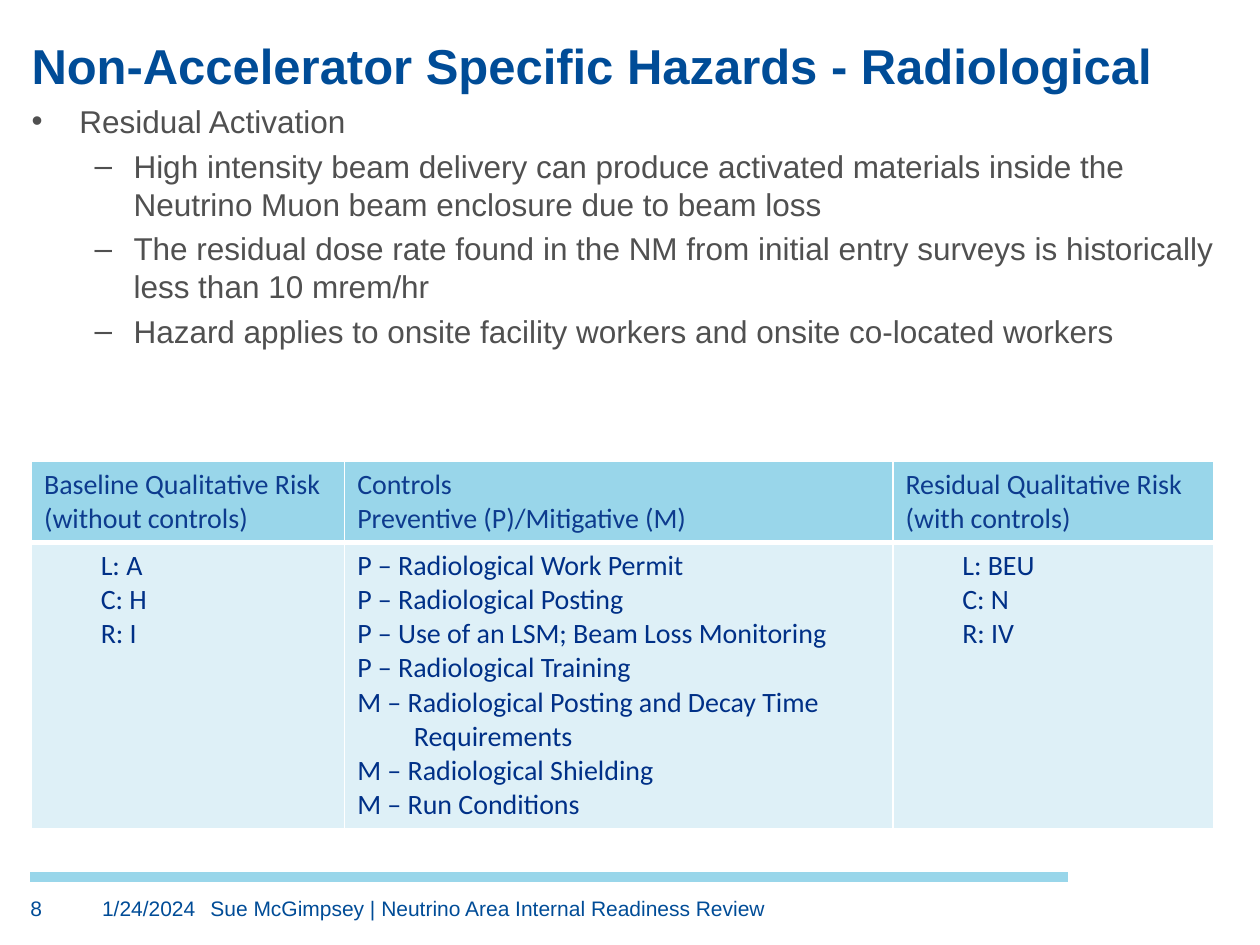
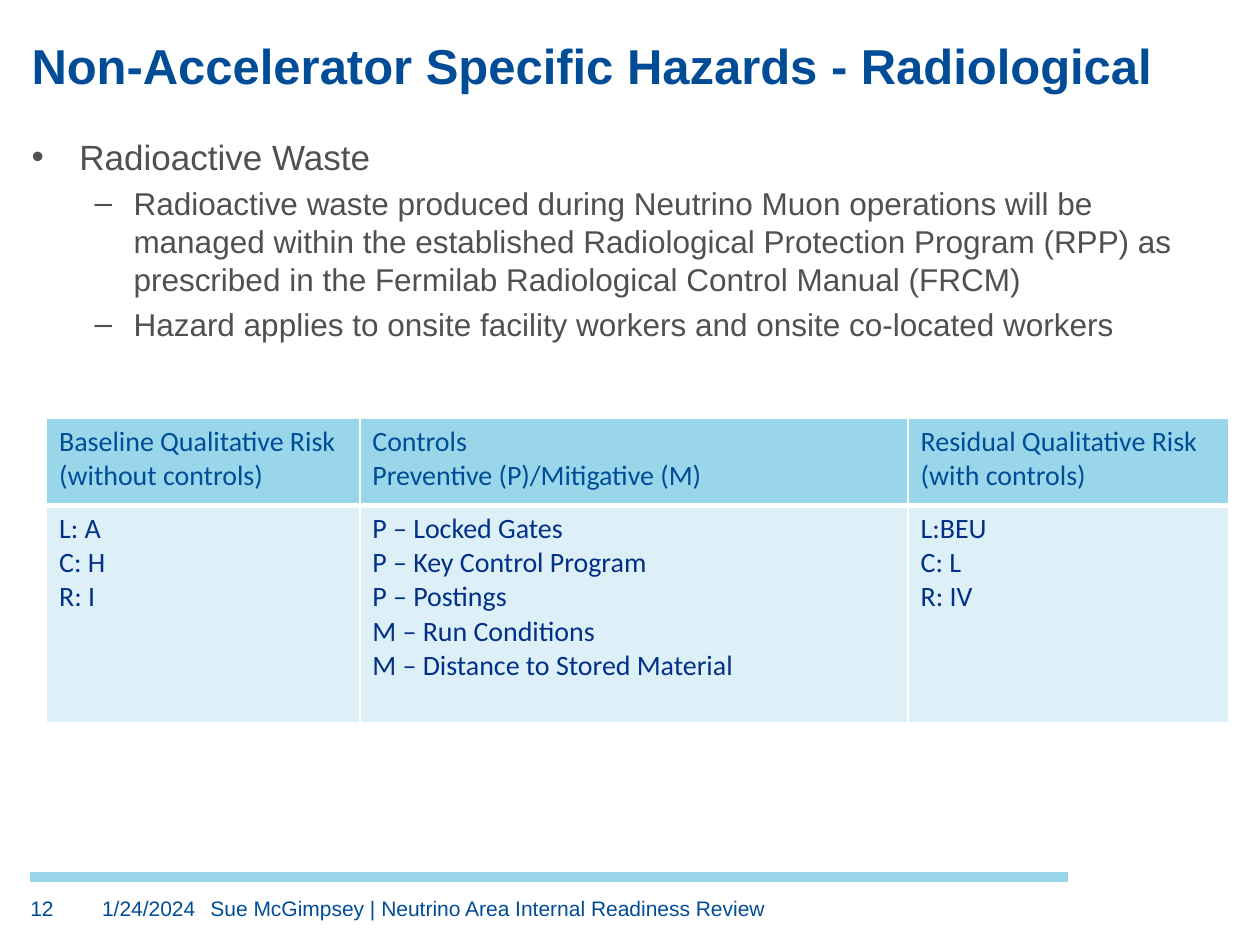
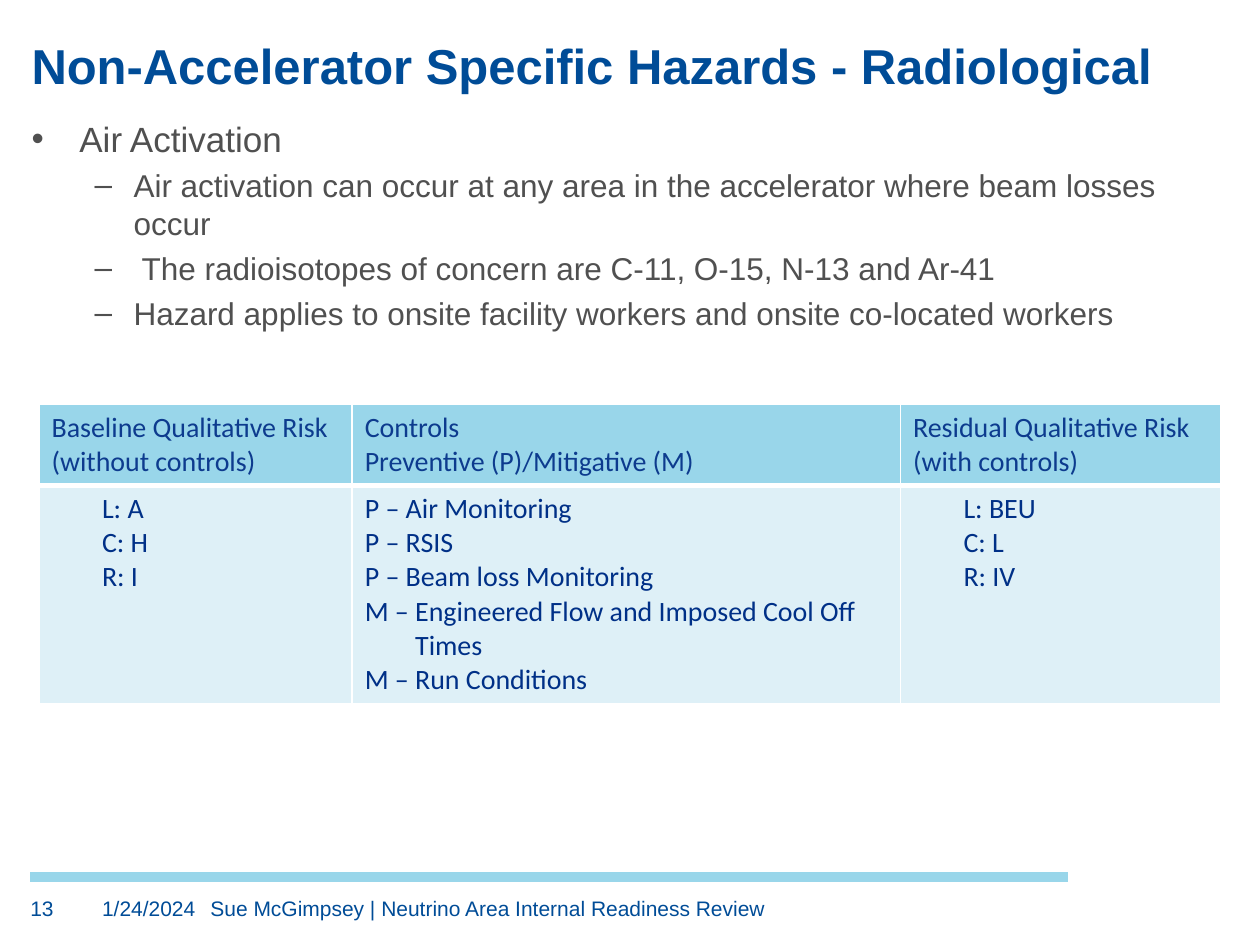
from dataclasses import dataclass

from lxml import etree
from pptx import Presentation
from pptx.dml.color import RGBColor
from pptx.enum.shapes import MSO_CONNECTOR as CONN
from pptx.enum.text import MSO_ANCHOR as ANCHOR, MSO_AUTO_SIZE as AUTO, PP_ALIGN as ALIGN
from pptx.oxml.ns import qn
from pptx.util import Inches, Pt

# Shared look
BLUE, NAVY, HEAD_INK = "004C97", "003087", "0D3B8E"
GREY, SKY, PALE, WHITE = "505050", "99D6EA", "DEF0F7", "FFFFFF"
SANS, TABLE_FONT = "Arial", "Calibri"

# Grid: 100 columns by 100 rows over the slide
SLIDE_W, SLIDE_H = Inches(10), Inches(7.5)
COL, ROW = SLIDE_W / 100, SLIDE_H / 100

TITLE = "Non-Accelerator Specific Hazards - Radiological"
DATE = "1/24/2024"
FOOTER = "Sue McGimpsey | Neutrino Area Internal Readiness Review"
WORKERS = "Hazard applies to onsite facility workers and onsite co-located workers"
HEADERS = [
    ["Baseline Qualitative Risk (without controls)"],
    ["Controls", "Preventive (P)/Mitigative (M)"],
    ["Residual Qualitative Risk", "(with controls)"],
]
COL_SHARES = (0.265, 0.464, 0.271)


@dataclass
class Box:
    col: float
    row: float
    cols: float
    rows: float

    def emu(self):
        return (round(self.col * COL), round(self.row * ROW),
                round(self.cols * COL), round(self.rows * ROW))


TITLE_BOX = Box(2.5, 3.73, 95, 6.27)
FOOT_BOX = Box(2.4, 92.8, 82.4, 5.6)


@dataclass
class Hazard:
    number: str
    topic: str
    topic_size: int
    points: list
    body: Box
    table: Box
    head_rows: float
    baseline: list
    controls: list
    residual: list
    head_ink: str = HEAD_INK
    hang: float = 0  # indent of wrapped control lines, in columns


def rgb(color):
    return RGBColor.from_string(color)


def add_run(p, text, size, color, font=SANS, bold=False):
    r = p.add_run()
    r.text = text
    r.font.size, r.font.name, r.font.bold = Pt(size), font, bold
    r.font.color.rgb = rgb(color)


def place(sp, box):
    sp.left, sp.top, sp.width, sp.height = box.emu()


def bare_frame(sp, anchor=ANCHOR.TOP):
    tf = sp.text_frame
    tf.word_wrap, tf.auto_size, tf.vertical_anchor = True, AUTO.NONE, anchor
    tf.margin_left = tf.margin_right = tf.margin_top = tf.margin_bottom = 0
    return tf


def set_indent(p, left, first=0, bullet=None):
    pPr = p._p.get_or_add_pPr()
    pPr.set("marL", str(round(left * COL)))
    pPr.set("indent", str(round(first * COL)))
    if bullet:
        etree.SubElement(pPr, qn("a:buFont")).set("typeface", SANS)
        etree.SubElement(pPr, qn("a:buChar")).set("char", bullet)


def add_title(slide, box):
    place(slide.shapes.title, box)
    p = bare_frame(slide.shapes.title, ANCHOR.BOTTOM).paragraphs[0]
    p.alignment = ALIGN.LEFT
    add_run(p, TITLE, 28, BLUE, bold=True)


def add_body(slide, hazard):
    sp = slide.placeholders[1]
    place(sp, hazard.body)
    tf = bare_frame(sp)
    p = tf.paragraphs[0]
    set_indent(p, 3.8, -3.8, "•")
    p.space_before = Pt(0)
    add_run(p, hazard.topic, hazard.topic_size, GREY)
    for point in hazard.points:
        p = tf.add_paragraph()
        p.level = 1
        set_indent(p, 8.1, -3.1, "–")
        p.space_before = Pt(4)
        add_run(p, point, 18, GREY)


def set_borders(cell, top, bottom):
    tcPr = cell._tc.get_or_add_tcPr()
    for side, width in (("L", 1), ("R", 1), ("T", top), ("B", bottom)):
        ln = etree.SubElement(tcPr, qn(f"a:ln{side}"), w=str(Pt(width)))
        fill = etree.SubElement(ln, qn("a:solidFill"))
        etree.SubElement(fill, qn("a:srgbClr"), val=WHITE)


def fill_cell(cell, lines, ink, back, borders, hang=0):
    set_borders(cell, *borders)
    cell.fill.solid()
    cell.fill.fore_color.rgb = rgb(back)
    tf = cell.text_frame
    for i, line in enumerate(lines):
        p = tf.add_paragraph() if i else tf.paragraphs[0]
        if hang and " – " not in line:
            set_indent(p, hang)
        add_run(p, line, 16, ink, TABLE_FONT)


def add_risk_table(slide, hazard):
    box = hazard.table
    table = slide.shapes.add_table(2, 3, *box.emu()).table
    table.first_row = table.horz_banding = False
    for column, share in zip(table.columns, COL_SHARES):
        column.width = round(share * box.cols * COL)
    for row, rows in zip(table.rows, (hazard.head_rows, box.rows - hazard.head_rows)):
        row.height = round(rows * ROW)
    risks = [hazard.baseline, hazard.controls, hazard.residual]
    for c, (header, lines) in enumerate(zip(HEADERS, risks)):
        fill_cell(table.cell(0, c), header, hazard.head_ink, SKY, (1, 3))
        fill_cell(table.cell(1, c), lines, NAVY, PALE, (3, 1), hazard.hang)


def add_footer(slide, box, number):
    # Band
    left, top, width, _ = box.emu()
    line = slide.shapes.add_connector(CONN.STRAIGHT, left, top, left + width, top)
    line.line.color.rgb = rgb(SKY)
    line.line.width = Pt(6)
    etree.SubElement(line._element.spPr, qn("a:effectLst"))
    # Number, date and event
    for offset, cols, text in ((0, 4.5, number), (5.7, 8.5, DATE), (14.3, 68.1, FOOTER)):
        part = Box(box.col + offset, box.row + 2, cols, box.rows - 2)
        tf = bare_frame(slide.shapes.add_textbox(*part.emu()))
        add_run(tf.paragraphs[0], text, 12, BLUE)


def add_hazard_slide(prs, hazard):
    slide = prs.slides.add_slide(prs.slide_layouts[1])
    add_title(slide, TITLE_BOX)
    add_body(slide, hazard)
    add_risk_table(slide, hazard)
    add_footer(slide, FOOT_BOX, hazard.number)


HAZARDS = [
    Hazard(
        "8", "Residual Activation", 18,
        ["High intensity beam delivery can produce activated materials inside the "
         "Neutrino Muon beam enclosure due to beam loss",
         "The residual dose rate found in the NM from initial entry surveys is "
         "historically less than 10 mrem/hr",
         WORKERS],
        Box(2.5, 10.8, 94.8, 36.5), Box(2.5, 48.8, 93.8, 38.8), 8.5,
        ["L: A", "C: H", "R: I"],
        ["P – Radiological Work Permit", "P – Radiological Posting",
         "P – Use of an LSM; Beam Loss Monitoring", "P – Radiological Training",
         "M – Radiological Posting and Decay Time", "Requirements",
         "M – Radiological Shielding", "M – Run Conditions"],
        ["L: BEU", "C: N", "R: IV"],
        hang=4.5),
    Hazard(
        "12", "Radioactive Waste", 20,
        ["Radioactive waste produced during Neutrino Muon operations will be managed "
         "within the established Radiological Protection Program (RPP) as prescribed "
         "in the Fermilab Radiological Control Manual (FRCM)",
         WORKERS],
        Box(2.5, 14.3, 94.8, 24.5), Box(3.7, 44.3, 93.8, 32.2), 9.2,
        ["L: A", "C: H", "R: I"],
        ["P – Locked Gates", "P – Key Control Program", "P – Postings",
         "M – Run Conditions", "M – Distance to Stored Material"],
        ["L:BEU", "C: L", "R: IV"],
        head_ink=BLUE),
    Hazard(
        "13", "Air Activation", 20,
        ["Air activation can occur at any area in the accelerator where beam losses occur",
         " The radioisotopes of concern are C-11, O-15, N-13 and Ar-41",
         WORKERS],
        Box(2.5, 12.4, 94.8, 24.4), Box(3.1, 42.8, 93.8, 31.5), 8.5,
        ["L: A", "C: H", "R: I"],
        ["P – Air Monitoring", "P – RSIS", "P – Beam loss Monitoring",
         "M – Engineered Flow and Imposed Cool Off", "Times", "M – Run Conditions"],
        ["L: BEU", "C: L", "R: IV"],
        hang=4),
]


def main():
    prs = Presentation()
    prs.slide_width, prs.slide_height = SLIDE_W, SLIDE_H
    for hazard in HAZARDS:
        add_hazard_slide(prs, hazard)
    prs.save("out.pptx")


if __name__ == "__main__":
    main()
